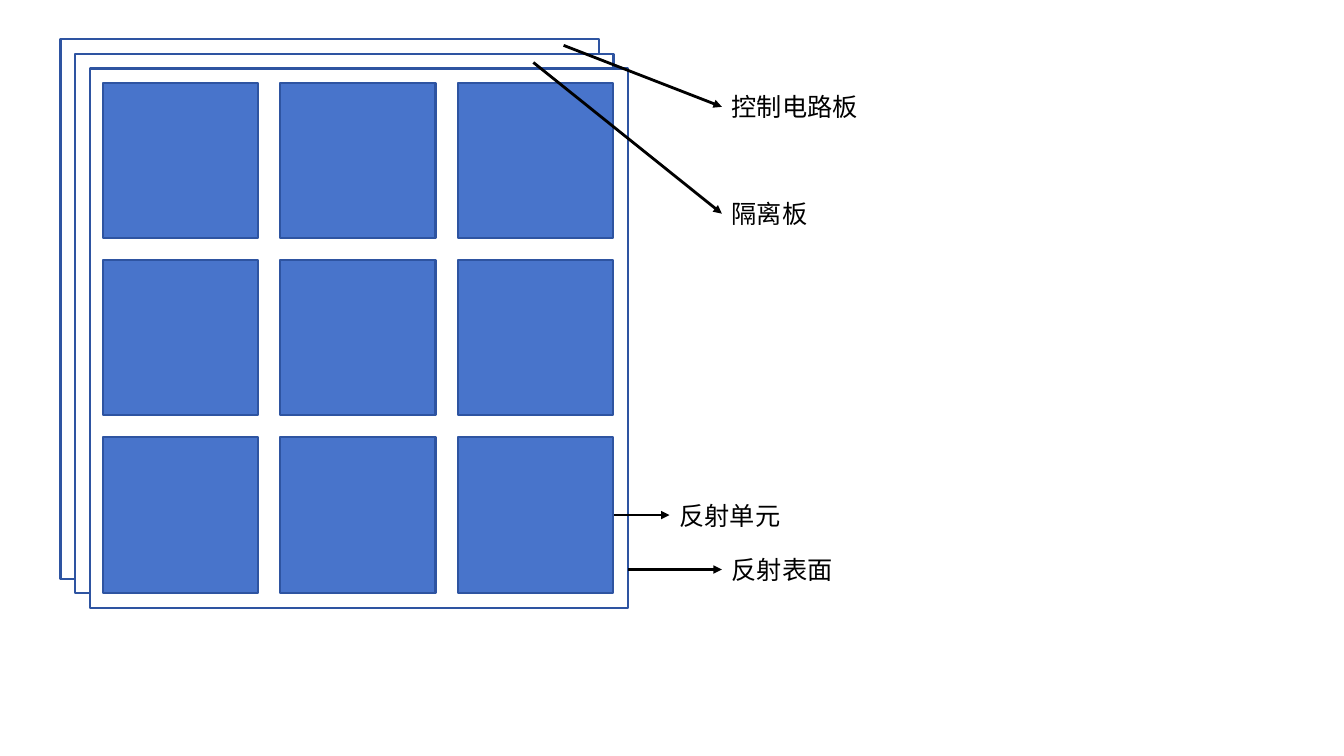
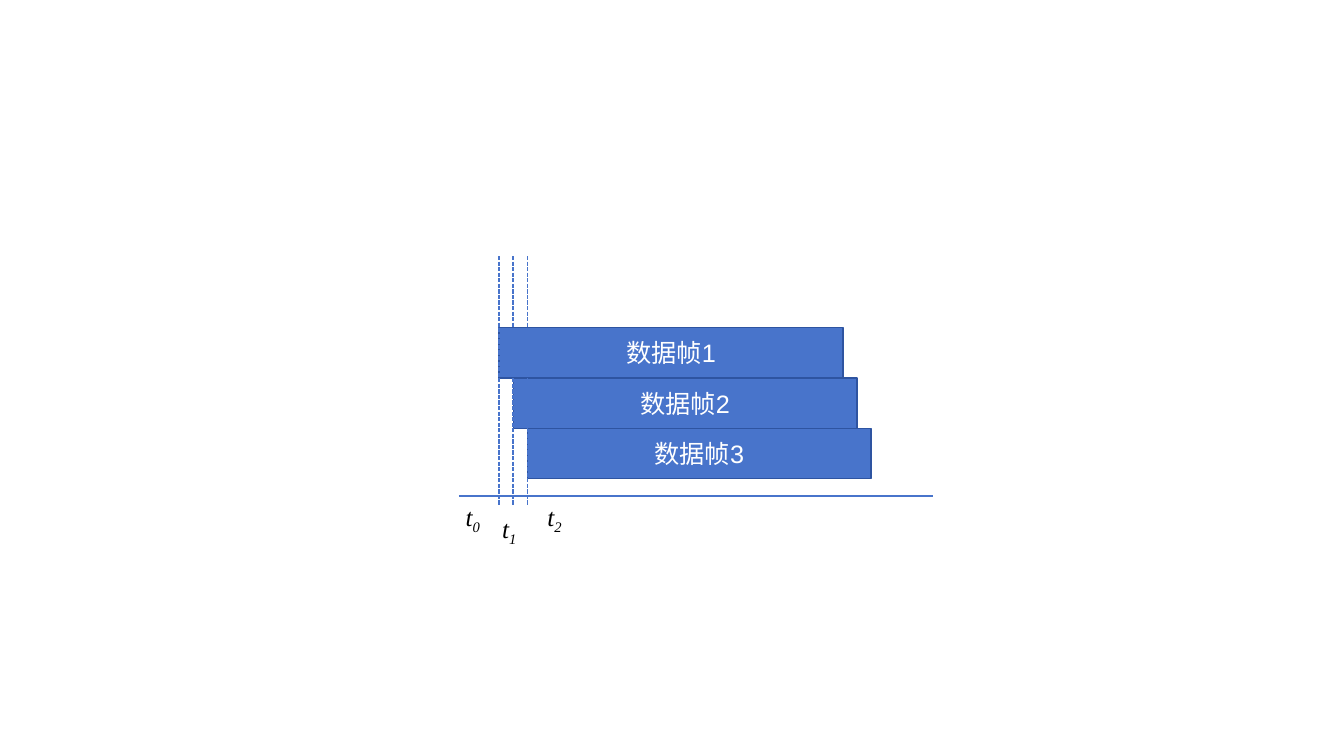
from lxml import etree
from pptx import Presentation
from pptx.dml.color import RGBColor
from pptx.enum.dml import MSO_LINE
from pptx.enum.shapes import MSO_CONNECTOR, MSO_SHAPE
from pptx.enum.text import MSO_ANCHOR, PP_ALIGN
from pptx.oxml.ns import qn
from pptx.util import Inches, Pt

RECT = MSO_SHAPE.RECTANGLE
STRAIGHT = MSO_CONNECTOR.STRAIGHT
DASH = MSO_LINE.SQUARE_DOT
MIDDLE = MSO_ANCHOR.MIDDLE
LEFT, CENTER = PP_ALIGN.LEFT, PP_ALIGN.CENTER

COLORS = {"blue": "4874CB", "edge": "2E54A1", "white": "FFFFFF", "black": "000000"}
SANS, SERIF = "Arial", "Times New Roman"
TEXT_SIZE = 18


def color(name):
    return RGBColor.from_string(COLORS[name])


def add_run(p, text, font, ink, italic=False, subscript=False):
    r = p.add_run()
    r.text = text
    r.font.name = font
    r.font.size = Pt(TEXT_SIZE)
    r.font.color.rgb = color(ink)
    if italic:
        r.font.italic = True
    if subscript:
        r._r.get_or_add_rPr().set("baseline", "-25000")


def add_rect(s, x, y, w, h, fill, line_width=None, text=None, ink="black", align=LEFT):
    sp = s.shapes.add_shape(RECT, Inches(x), Inches(y), Inches(w), Inches(h))
    sp.shadow.inherit = False
    sp.fill.solid()
    sp.fill.fore_color.rgb = color(fill)
    if line_width:
        sp.line.color.rgb = color("edge")
        sp.line.width = Pt(line_width)
    else:
        sp.line.fill.background()
    if text:
        tf = sp.text_frame
        tf.word_wrap = True
        tf.vertical_anchor = MIDDLE
        p = tf.paragraphs[0]
        p.alignment = align
        add_run(p, text, SANS, ink)


def add_line(s, start, end, ink, width, dash=None, arrow=False):
    cx = s.shapes.add_connector(STRAIGHT, *map(Inches, start + end))
    cx.line.color.rgb = color(ink)
    cx.line.width = Pt(width)
    if dash:
        cx.line.dash_style = dash
    if arrow:
        etree.SubElement(cx.line._get_or_add_ln(), qn("a:tailEnd"), type="triangle")
    etree.SubElement(cx._element.spPr, qn("a:effectLst"))


def add_callout(s, text, start, tip):
    """An arrow from start to tip, with a label centred on the tip's height."""
    height = 0.49
    add_rect(s, tip[0], tip[1] - height / 2, 1.64, height, "white", text=text)
    add_line(s, start, tip, "black", 2, arrow=True)


def add_time_mark(s, x, y, index):
    tb = s.shapes.add_textbox(Inches(x), Inches(y), Inches(0.42), Inches(0.36))
    tf = tb.text_frame
    tf.word_wrap = True
    tf.vertical_anchor = MIDDLE
    tf.margin_left = tf.margin_right = 0
    p = tf.paragraphs[0]
    p.alignment = CENTER
    add_run(p, "t", SERIF, "black", italic=True)
    add_run(p, str(index), SERIF, "black", italic=True, subscript=True)


def build_surface_slide(s):
    for layer in range(3):
        shift = layer * 0.145
        add_rect(s, 0.6 + shift, 0.39 + shift, 5.34, 5.35, "white", 1.5)
    pitch = 1.76
    for row in range(3):
        for col in range(3):
            add_rect(s, 1.02 + col * pitch, 0.82 + row * pitch, 1.54, 1.54, "blue", 1.5)
    callouts = [
        ("反射单元", (6.09, 5.11), (6.64, 5.11)),
        ("反射表面", (6.23, 5.65), (7.16, 5.65)),
        ("隔离板", (5.29, 0.62), (7.16, 2.12)),
        ("控制电路板", (5.59, 0.45), (7.16, 1.06)),
    ]
    for text, start, tip in callouts:
        add_callout(s, text, start, tip)


def build_frames_slide(s):
    bar_height = 0.5
    starts = [4.95 + i * 0.14 for i in range(3)]
    for i, x in enumerate(starts):
        add_rect(s, x, 3.25 + i * bar_height, 3.41, bar_height, "blue", 1,
                 f"数据帧{i + 1}", "white", CENTER)
    for x in starts:
        add_line(s, (x, 2.54), (x, 5.02), "blue", 1, dash=DASH)
    add_line(s, (4.55, 4.92), (9.25, 4.92), "blue", 1)
    for i, (x, y) in enumerate([(4.48, 4.96), (4.84, 5.08), (5.29, 4.96)]):
        add_time_mark(s, x, y, i)


def main():
    prs = Presentation()
    prs.slide_width, prs.slide_height = Inches(13.33), Inches(7.5)
    blank = prs.slide_layouts[6]
    for build in (build_surface_slide, build_frames_slide):
        build(prs.slides.add_slide(blank))
    prs.save("out.pptx")


if __name__ == "__main__":
    main()
